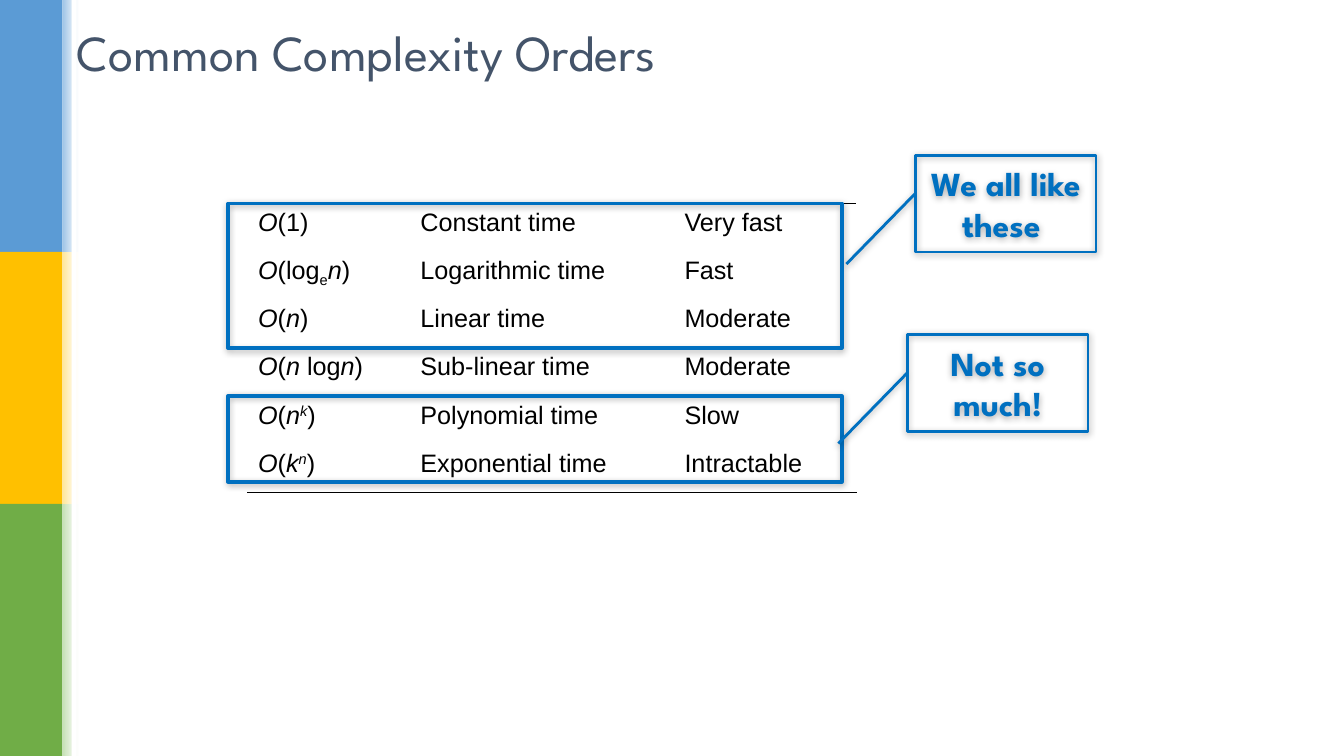
from dataclasses import dataclass
from typing import NamedTuple

from lxml.etree import SubElement as Sub
from pptx import Presentation
from pptx.dml.color import RGBColor as Rgb
from pptx.enum.shapes import MSO_SHAPE as Kind
from pptx.enum.text import MSO_ANCHOR as Anchor, PP_ALIGN as Align
from pptx.oxml.ns import qn
from pptx.util import Inches, Pt


@dataclass(frozen=True)
class Theme:
    head: str = "44546A"
    ink: str = "000000"
    blue: str = "0070C0"
    white: str = "FFFFFF"
    sans: str = "Arial"
    show: str = "League Spartan"
    big: int = 36
    mid: int = 24
    small: int = 18


class Box(NamedTuple):
    """Shares of the slide's width and height, in percent."""
    x: float
    y: float
    w: float
    h: float


class Bit(NamedTuple):
    text: str
    slant: bool = False
    base: int = 0


class Order(NamedTuple):
    sign: list[Bit]
    name: str
    speed: str


class Band(NamedTuple):
    full: str
    pale: str


class Note(NamedTuple):
    text: str
    x: float
    y: float


T = Theme()
BANDS = [Band("5B9BD5", "9DC3E6"), Band("FFC000", "FFE699"), Band("70AD47", "C5E0B4")]
BAR, FADE = 4.65, 1.2
LEFT, TOP, ROW = 18.45, 26.93, 6.37
COLS = [12.08, 19.65, 13.58]
O, N, K = Bit("O", True), Bit("n", True), Bit("k", True)
OPEN, SHUT = Bit("("), Bit(")")
ORDERS = [
    Order([O, Bit("(1)")], "Constant time", "Very fast"),
    Order([O, Bit("(log"), Bit("e", base=-25), N, SHUT], "Logarithmic time", "Fast"),
    Order([O, OPEN, N, SHUT], "Linear time", "Moderate"),
    Order([O, OPEN, N, Bit(" log"), N, SHUT], "Sub-linear time", "Moderate"),
    Order([O, OPEN, N, Bit("k", True, 30), SHUT], "Polynomial time", "Slow"),
    Order([O, OPEN, K, Bit("n", True, 30), SHUT], "Exponential time", "Intractable"),
]
FRAMES = [Box(16.95, TOP, 45.69, 3 * ROW), Box(16.95, TOP + 4 * ROW, 45.69, 11.33)]
NOTES = [Note("We all like these ", 68.12, 20.53), Note("Not so much!", 67.52, 44.27)]
NOTE_W, NOTE_H = 13.43, 12.8
POINTER = [0.39, 0.002, 1.125, -0.383]

deck = Presentation()
deck.slide_width, deck.slide_height = Inches(13.33), Inches(7.5)
slide = deck.slides.add_slide(deck.slide_layouts[6])
shapes = slide.shapes


def across(share: float) -> int:
    return round(deck.slide_width * share / 100)


def down(share: float) -> int:
    return round(deck.slide_height * share / 100)


def place(box: Box) -> tuple[int, int, int, int]:
    return across(box.x), down(box.y), across(box.w), down(box.h)


def write(para, bits: list[Bit], face: str, size: int, tint: str, bold: bool = False) -> None:
    for bit in bits:
        run = para.add_run()
        run.text = bit.text
        font = run.font
        font.name, font.size, font.bold, font.italic = face, Pt(size), bold, bit.slant
        font.color.rgb = Rgb.from_string(tint)
        if bit.base:
            run._r.get_or_add_rPr().set("baseline", str(bit.base * 1000))


def block(box: Box, tint: str, fade: bool = False) -> None:
    shape = shapes.add_shape(Kind.RECTANGLE, *place(box))
    shape.shadow.inherit = False
    shape.line.fill.background()
    if fade:
        shape.fill.gradient()
        shape.fill.gradient_angle = 0
        for stop, shade in zip(shape.fill.gradient_stops, (tint, T.white)):
            stop.color.rgb = Rgb.from_string(shade)
    else:
        shape.fill.solid()
        shape.fill.fore_color.rgb = Rgb.from_string(tint)


def frame(kind: Kind, box: Box, width: float):
    """Hollow blue outline with a soft shadow."""
    shape = shapes.add_shape(kind, *place(box))
    shape.fill.background()
    shape.line.color.rgb = Rgb.from_string(T.blue)
    shape.line.width = Pt(width)
    shape.shadow.inherit = False
    glow = Sub(shape._element.spPr.find(qn("a:effectLst")), qn("a:outerShdw"),
               blurRad=str(Pt(5)), dist=str(Pt(1)), dir="5400000", rotWithShape="0")
    Sub(Sub(glow, qn("a:srgbClr"), val=T.ink), qn("a:alpha"), val="32000")
    return shape


def rule(cell, side: str) -> None:
    line = Sub(cell._tc.get_or_add_tcPr(), qn(f"a:{side}"), w=str(Pt(1)))
    Sub(Sub(line, qn("a:solidFill")), qn("a:srgbClr"), val=T.ink)


# Side bars, each fading out to the right
step = 100 / len(BANDS)
for i, band in enumerate(BANDS):
    block(Box(0, i * step, BAR, step), band.full)
    block(Box(BAR, i * step, FADE, step), band.pale, fade=True)
block(Box(5.33, 0, 0.38, 100), T.white)

# Title
title = shapes.add_textbox(*place(Box(4.95, 0, 93.92, 13.47))).text_frame
title.word_wrap = True
title.vertical_anchor = Anchor.MIDDLE
write(title.paragraphs[0], [Bit("Common Complexity Orders")], T.show, T.big, T.head)

# Table of orders
area = Box(LEFT, TOP, sum(COLS), ROW * len(ORDERS))
table = shapes.add_table(len(ORDERS), len(COLS), *place(area)).table
table.first_row = table.horz_banding = False
for col, share in zip(table.columns, COLS):
    col.width = across(share)
for i, order in enumerate(ORDERS):
    table.rows[i].height = down(ROW)
    for j, bits in enumerate([order.sign, [Bit(order.name)], [Bit(order.speed)]]):
        cell = table.cell(i, j)
        if i == 0:
            rule(cell, "lnT")
        if i == len(ORDERS) - 1:
            rule(cell, "lnB")
        cell.fill.background()
        write(cell.text_frame.paragraphs[0], bits, T.sans, T.small, T.ink)

# Frames round the rows
for box in FRAMES:
    frame(Kind.RECTANGLE, box, 2.5)

# Callouts
for note in NOTES:
    shape = frame(Kind.LINE_CALLOUT_1, Box(note.x, note.y, NOTE_W, NOTE_H), 2)
    for i, value in enumerate(POINTER):
        shape.adjustments[i] = value
    body = shape.text_frame
    body.word_wrap = True
    body.vertical_anchor = Anchor.MIDDLE
    body.paragraphs[0].alignment = Align.CENTER
    write(body.paragraphs[0], [Bit(note.text)], T.show, T.mid, T.blue, bold=True)

deck.save("out.pptx")
